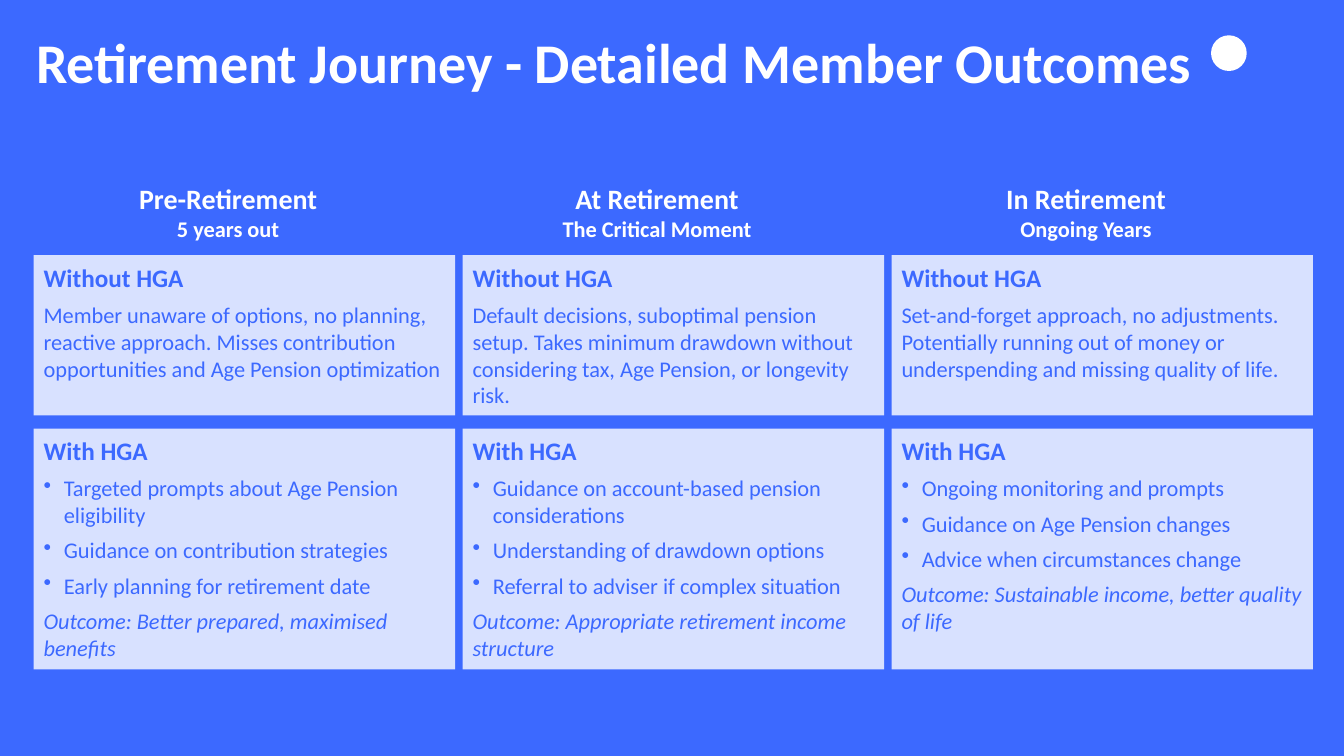
from lxml import etree
from pptx import Presentation
from pptx.dml.color import RGBColor
from pptx.enum.shapes import MSO_SHAPE
from pptx.enum.text import MSO_ANCHOR, PP_ALIGN
from pptx.oxml.ns import qn
from pptx.util import Cm, Pt

RECTANGLE, OVAL = MSO_SHAPE.RECTANGLE, MSO_SHAPE.OVAL
TOP, LEFT, CENTER = MSO_ANCHOR.TOP, PP_ALIGN.LEFT, PP_ALIGN.CENTER
TITLE_ONLY = 5
FONT = "Calibri"
BLUE, PALE, WHITE = "3C69FF", "D8E1FF", "FFFFFF"

STAGES = [
    ("Pre-Retirement", "5 years out",
     "Member unaware of options, no planning, reactive approach. "
     "Misses contribution opportunities and Age Pension optimization",
     ["Targeted prompts about Age Pension eligibility",
      "Guidance on contribution strategies",
      "Early planning for retirement date"],
     "Outcome: Better prepared, maximised benefits"),
    ("At Retirement", "The Critical Moment",
     "Default decisions, suboptimal pension setup. Takes minimum drawdown "
     "without considering tax, Age Pension, or longevity risk.",
     ["Guidance on account-based pension considerations",
      "Understanding of drawdown options",
      "Referral to adviser if complex situation"],
     "Outcome: Appropriate retirement income structure"),
    ("In Retirement", "Ongoing Years",
     "Set-and-forget approach, no adjustments. Potentially running out of "
     "money or underspending and missing quality of life.",
     ["Ongoing monitoring and prompts",
      "Guidance on Age Pension changes",
      "Advice when circumstances change"],
     "Outcome: Sustainable income, better quality of life"),
]


def paint(target, color):
    """Give a fill a solid colour from a hex string."""
    target.solid()
    target.fore_color.rgb = RGBColor.from_string(color)


def write(paragraph, words, size, color, bold=False, italic=False, align=LEFT):
    """Add one formatted run to a paragraph."""
    paragraph.alignment = align
    run = paragraph.add_run()
    run.text = words
    run.font.name = FONT
    run.font.size = Pt(size)
    run.font.bold = bold
    run.font.italic = italic
    paint(run.font.fill, color)


def bullet(paragraph):
    """Turn a paragraph into a hanging bullet item."""
    properties = paragraph._p.get_or_add_pPr()
    properties.set("marL", str(Cm(0.51)))
    properties.set("indent", str(-Cm(0.51)))
    etree.SubElement(properties, qn("a:buChar")).set("char", "•")


def add_plain(slide, preset, color, left, top, width, height):
    """Add a flat shape without outline or shadow."""
    plain = slide.shapes.add_shape(preset, Cm(left), Cm(top), Cm(width), Cm(height))
    paint(plain.fill, color)
    plain.line.fill.background()
    plain.shadow.inherit = False
    return plain


def add_title(slide, words, left, top, width, height):
    """Place the slide title and the round emblem at its right end."""
    title = slide.shapes.title
    title.left, title.top = Cm(left), Cm(top)
    title.width, title.height = Cm(width), Cm(height)
    frame = title.text_frame
    frame.margin_left = frame.margin_right = 0
    frame.margin_top = frame.margin_bottom = 0
    frame.vertical_anchor = TOP
    frame.paragraphs[0].line_spacing = 0.9
    write(frame.paragraphs[0], words, 40, WHITE, bold=True)
    add_plain(slide, OVAL, WHITE, left + width - 2.5, top, 0.9, 0.9)


def add_heading(slide, stage, timing, left, top, width, height):
    """Place the two centred lines that head a stage."""
    heading = slide.shapes.add_textbox(Cm(left), Cm(top), Cm(width), Cm(height))
    frame = heading.text_frame
    frame.word_wrap = True
    write(frame.paragraphs[0], stage, 20, WHITE, bold=True, align=CENTER)
    write(frame.add_paragraph(), timing, 16, WHITE, bold=True, align=CENTER)


def add_card(slide, label, entries, left, top, width, height):
    """Place a pale card with a label and (words, kind) entries."""
    card = add_plain(slide, RECTANGLE, PALE, left, top, width, height)
    frame = card.text_frame
    frame.word_wrap = True
    frame.vertical_anchor = TOP
    frame.margin_top = Cm(0.18)
    write(frame.paragraphs[0], label, 18, BLUE, bold=True)
    for words, kind in entries:
        paragraph = frame.add_paragraph()
        paragraph.space_before = Pt(6)
        write(paragraph, words, 16, BLUE, italic=kind == "outcome")
        if kind == "bullet":
            bullet(paragraph)


def add_stage(slide, content, left, top, width):
    """Stack a stage's heading and its two cards in one column."""
    stage, timing, without, prompts, outcome = content
    add_heading(slide, stage, timing, left + 1.14, top, 7.52, 1.8)
    add_card(slide, "Without HGA", [(without, "text")], left, top + 1.98, width, 4.04)
    entries = [(prompt, "bullet") for prompt in prompts] + [(outcome, "outcome")]
    add_card(slide, "With HGA", entries, left, top + 6.35, width, 6.07)


def main():
    """Build the slide and save it."""
    deck = Presentation()
    deck.slide_width, deck.slide_height = Cm(33.87), Cm(19.05)
    slide = deck.slides.add_slide(deck.slide_layouts[TITLE_ONLY])
    paint(slide.background.fill, BLUE)
    add_title(slide, "Retirement Journey - Detailed Member Outcomes", 0.91, 0.89, 32.11, 1.4)
    for column, content in enumerate(STAGES):
        add_stage(slide, content, 0.85 + column * 10.81, 4.45, 10.62)
    deck.save("out.pptx")


if __name__ == "__main__":
    main()
